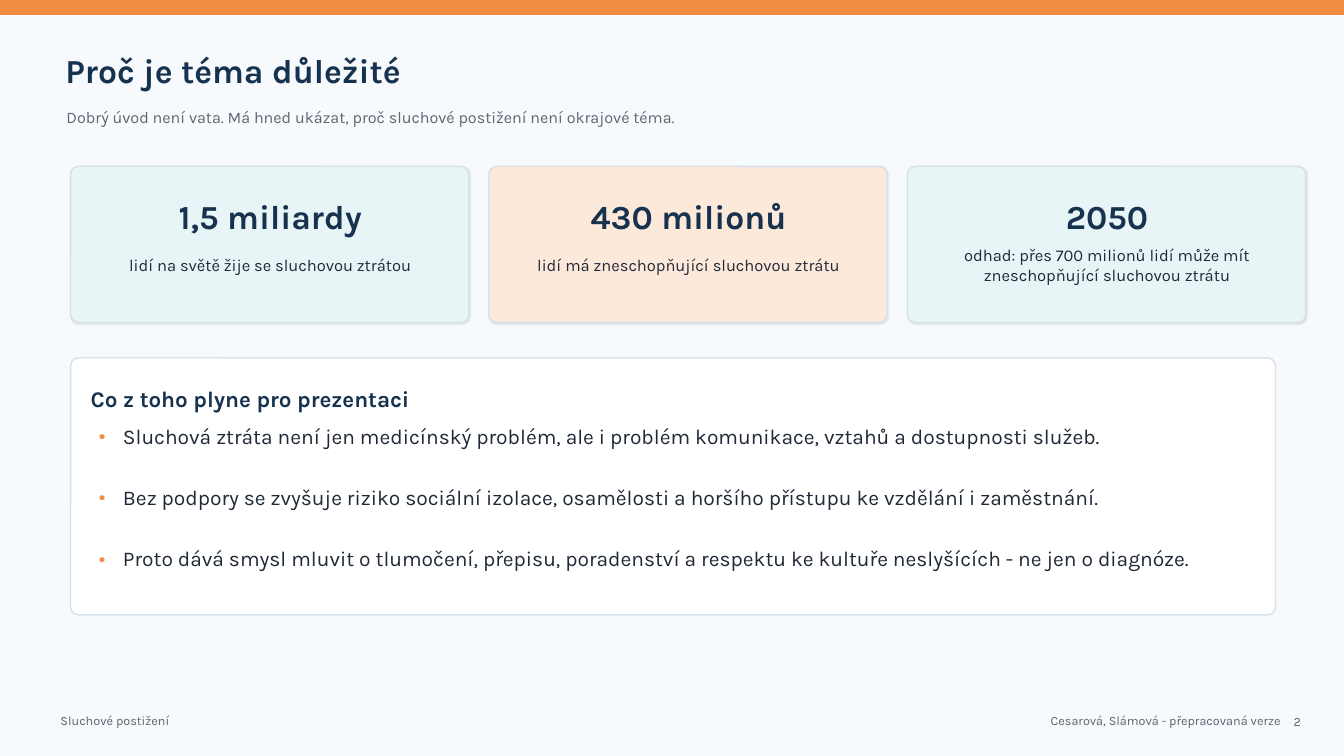
from lxml import etree
from pptx import Presentation
from pptx.dml.color import RGBColor
from pptx.enum.shapes import MSO_SHAPE as SHAPE
from pptx.enum.text import MSO_ANCHOR as ANCHOR, PP_ALIGN as ALIGN
from pptx.oxml.ns import qn
from pptx.util import Inches, Pt

FONT = "Karla"
COLORS = {
    "background": "F7FAFC", "accent": "F28C45", "navy": "16324F",
    "body": "1F2937", "muted": "5B6573", "border": "D7E1EA",
    "teal": "E8F5F7", "peach": "FDE9DA", "white": "FFFFFF",
}
TITLE = "Proč je téma důležité"
SUBTITLE = "Dobrý úvod není vata. Má hned ukázat, proč sluchové postižení není okrajové téma."
STATS = [
    ("1,5 miliardy", "lidí na světě žije se sluchovou ztrátou", "teal"),
    ("430 milionů", "lidí má zneschopňující sluchovou ztrátu", "peach"),
    ("2050", "odhad: přes 700 milionů lidí může mít zneschopňující sluchovou ztrátu", "teal"),
]
PANEL_HEADING = "Co z toho plyne pro prezentaci"
POINTS = [
    "Sluchová ztráta není jen medicínský problém, ale i problém komunikace, vztahů a dostupnosti služeb.",
    "Bez podpory se zvyšuje riziko sociální izolace, osamělosti a horšího přístupu ke vzdělání i zaměstnání.",
    "Proto dává smysl mluvit o tlumočení, přepisu, poradenství a respektu ke kultuře neslyšících - ne jen o diagnóze.",
]
FOOTER_LEFT = "Sluchové postižení"
FOOTER_RIGHT = "Cesarová, Slámová - přepracovaná verze"
PAGE_NUMBER = "2"

CARD_LEFT, CARD_TOP, CARD_WIDTH, CARD_HEIGHT, CARD_GAP = 0.7, 1.65, 3.95, 1.55, 0.2
BULLET_INDENT = 0.24


def rgb(name):
    return RGBColor.from_string(COLORS[name])


def add_box(slide, kind, box, fill, line, radius=None):
    sp = slide.shapes.add_shape(kind, *map(Inches, box))
    sp.shadow.inherit = False
    sp.fill.solid()
    sp.fill.fore_color.rgb = rgb(fill)
    sp.line.color.rgb = rgb(line)
    sp.line.width = Pt(1)
    if radius is not None:
        sp.adjustments[0] = radius
    return sp


def add_soft_shadow(sp):
    effects = sp._element.spPr.find(qn("a:effectLst"))
    shadow = etree.SubElement(effects, qn("a:outerShdw"), blurRad=str(Pt(1.2)),
                              dist=str(Pt(0.3)), dir=str(45 * 60000),
                              algn="ctr", rotWithShape="0")
    color = etree.SubElement(shadow, qn("a:srgbClr"), val="000000")
    etree.SubElement(color, qn("a:alpha"), val="10000")


def add_bullet(p):
    pPr = p._p.get_or_add_pPr()
    pPr.set("marL", str(Inches(BULLET_INDENT)))
    pPr.set("indent", str(-Inches(BULLET_INDENT)))
    color = etree.SubElement(pPr, qn("a:buClr"))
    etree.SubElement(color, qn("a:srgbClr"), val=COLORS["accent"])
    etree.SubElement(pPr, qn("a:buSzPct"), val="113000")
    etree.SubElement(pPr, qn("a:buFont"), typeface=FONT)
    etree.SubElement(pPr, qn("a:buChar"), char="•")


def add_text(slide, box, lines, size, color, bold=False, align=ALIGN.LEFT,
             anchor=ANCHOR.MIDDLE, inset=(0, 0), bullets=False, gap=0):
    """Write one paragraph per line; inset is (horizontal, vertical) inches, gap is points."""
    tf = slide.shapes.add_textbox(*map(Inches, box)).text_frame
    tf.word_wrap = True
    tf.vertical_anchor = anchor
    tf.margin_left = tf.margin_right = Inches(inset[0])
    tf.margin_top = tf.margin_bottom = Inches(inset[1])
    for i, line in enumerate(lines):
        p = tf.paragraphs[0] if i == 0 else tf.add_paragraph()
        p.alignment = align
        if i:
            p.space_before = Pt(gap)
        if bullets:
            add_bullet(p)
        r = p.add_run()
        r.text = line
        r.font.name = FONT
        r.font.size = Pt(size)
        r.font.bold = bold
        r.font.color.rgb = rgb(color)


def main():
    prs = Presentation()
    prs.slide_width, prs.slide_height = Inches(13.33), Inches(7.5)
    slide = prs.slides.add_slide(prs.slide_layouts[6])
    slide.background.fill.solid()
    slide.background.fill.fore_color.rgb = rgb("background")

    add_box(slide, SHAPE.RECTANGLE, (0, 0, 13.33, 0.14), "accent", "accent")
    add_text(slide, (0.65, 0.42, 8.8, 0.55), [TITLE], 24, "navy", bold=True)
    add_text(slide, (0.66, 0.98, 10.8, 0.36), [SUBTITLE], 11.5, "muted")

    for i, (figure, caption, fill) in enumerate(STATS):
        left = CARD_LEFT + i * (CARD_WIDTH + CARD_GAP)
        card = add_box(slide, SHAPE.ROUNDED_RECTANGLE,
                       (left, CARD_TOP, CARD_WIDTH, CARD_HEIGHT), fill, "border", 0.052)
        add_soft_shadow(card)
        text_left = left + 0.18
        add_text(slide, (text_left, CARD_TOP + 0.25, 3.6, 0.48), [figure], 24, "navy",
                 bold=True, align=ALIGN.CENTER)
        add_text(slide, (text_left, CARD_TOP + 0.77, 3.6, 0.42), [caption], 11.8, "body",
                 align=ALIGN.CENTER)

    add_box(slide, SHAPE.ROUNDED_RECTANGLE, (CARD_LEFT, 3.55, 11.95, 2.55),
            "white", "border", 0.031)
    add_text(slide, (0.9, 3.8, 3.2, 0.3), [PANEL_HEADING], 16, "navy", bold=True)
    add_text(slide, (0.98, 4.2, 11, 1.64), POINTS, 15, "body", anchor=ANCHOR.TOP,
             bullets=True, gap=25.7)

    add_text(slide, (0.6, 7.04, 4.4, 0.22), [FOOTER_LEFT], 9, "muted")
    add_text(slide, (8.3, 7.04, 4.4, 0.22), [FOOTER_RIGHT], 9, "muted", align=ALIGN.RIGHT)
    add_text(slide, (12.65, 7.03, 0.35, 0.22), [PAGE_NUMBER], 9, "muted",
             align=ALIGN.RIGHT, anchor=ANCHOR.TOP, inset=(0.1, 0.05))
    prs.save("out.pptx")


if __name__ == "__main__":
    main()
